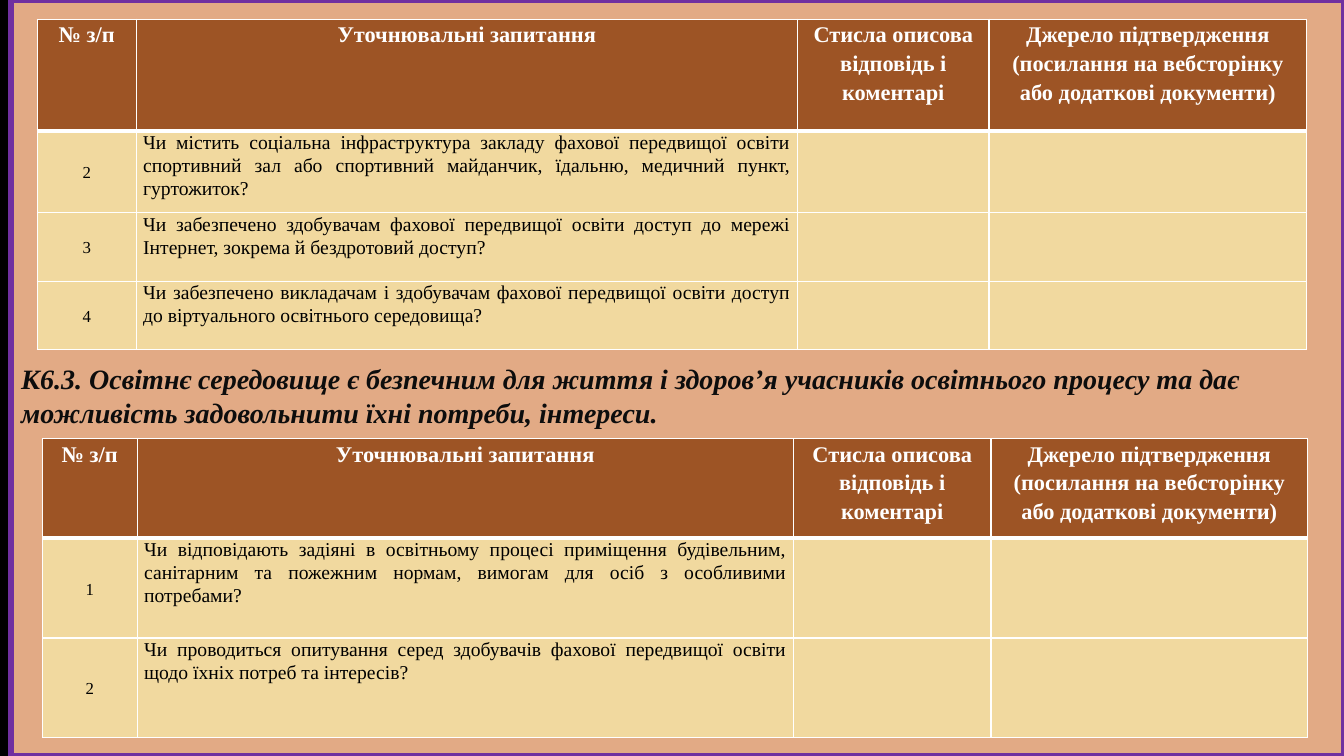
from dataclasses import dataclass

from lxml import etree
from pptx import Presentation
from pptx.dml.color import RGBColor
from pptx.enum.text import MSO_ANCHOR, MSO_AUTO_SIZE, PP_ALIGN
from pptx.oxml.ns import qn
from pptx.slide import Slide
from pptx.table import _Cell
from pptx.text.text import _Paragraph
from pptx.util import Emu, Pt

TOP, MIDDLE = MSO_ANCHOR.TOP, MSO_ANCHOR.MIDDLE
LEFT, CENTER, JUSTIFY = PP_ALIGN.LEFT, PP_ALIGN.CENTER, PP_ALIGN.JUSTIFY
NO_AUTOFIT = MSO_AUTO_SIZE.NONE
TITLE_ONLY = 5
EMU_PER_PX = 9144  # 100 px to the inch


@dataclass(frozen=True)
class Theme:
    font: str = "Times New Roman"
    backdrop: str = "000000"
    panel: str = "E2AA85"
    frame: str = "7030A0"
    title: str = "0D0D0D"
    header: str = "9D5425"
    body: str = "F1D99F"
    light: str = "FFFFFF"
    dark: str = "000000"
    title_size: int = 20
    header_size: int = 16
    question_size: int = 14
    number_size: int = 12
    frame_width: float = 4.5
    thin: int = 1
    thick: int = 3


@dataclass(frozen=True)
class TextStyle:
    size: int
    color: str
    align: PP_ALIGN
    spacing: float
    bold: bool = False
    italic: bool = False


@dataclass(frozen=True)
class Question:
    number: int
    text: str


@dataclass(frozen=True)
class QuestionTable:
    left: int
    top: int
    columns: tuple[int, ...]
    rows: tuple[int, ...]
    questions: tuple[Question, ...]


THEME = Theme()
TITLE_STYLE = TextStyle(THEME.title_size, THEME.title, LEFT, 1.0, True, True)
HEADER_STYLE = TextStyle(THEME.header_size, THEME.light, CENTER, 1.15, True)
NUMBER_STYLE = TextStyle(THEME.number_size, THEME.dark, CENTER, 1.15)
QUESTION_STYLE = TextStyle(THEME.question_size, THEME.dark, JUSTIFY, 1.06)

TITLE = (
    "К6.3. Освітнє середовище є безпечним для життя і здоров’я учасників "
    "освітнього процесу та дає можливість задовольнити їхні потреби, інтереси."
)
HEADERS = (
    ("№ з/п",),
    ("Уточнювальні запитання",),
    ("Стисла описова відповідь і коментарі",),
    ("Джерело підтвердження", "(посилання на вебсторінку або додаткові документи)"),
)
TABLES = (
    QuestionTable(37, 19, (98, 656, 190, 315), (111, 81, 68, 68), (
        Question(2, "Чи містить соціальна інфраструктура закладу фахової передвищої "
                    "освіти спортивний зал або спортивний майданчик, їдальню, "
                    "медичний пункт, гуртожиток?"),
        Question(3, "Чи забезпечено здобувачам фахової передвищої освіти доступ до "
                    "мережі Інтернет, зокрема й бездротовий доступ?"),
        Question(4, "Чи забезпечено викладачам і здобувачам фахової передвищої "
                    "освіти доступ до віртуального освітнього середовища?"),
    )),
    QuestionTable(42, 435, (94, 651, 196, 314), (99, 99, 99), (
        Question(1, "Чи відповідають задіяні в освітньому процесі приміщення "
                    "будівельним, санітарним та пожежним нормам, вимогам для осіб "
                    "з особливими потребами?"),
        Question(2, "Чи проводиться опитування серед здобувачів фахової передвищої "
                    "освіти щодо їхніх потреб та інтересів?"),
    )),
)


def px(length: int) -> Emu:
    return Emu(length * EMU_PER_PX)


def rgb(color: str) -> RGBColor:
    return RGBColor.from_string(color)


def write(para: _Paragraph, text: str, style: TextStyle) -> None:
    para.alignment = style.align
    para.line_spacing = style.spacing
    span = para.add_run()
    span.text = text
    span.font.name = THEME.font
    span.font.size = Pt(style.size)
    span.font.bold = style.bold
    span.font.italic = style.italic
    span.font.color.rgb = rgb(style.color)


def fill_cell(cell: _Cell, lines: tuple[str, ...], style: TextStyle, anchor: MSO_ANCHOR) -> None:
    cell.vertical_anchor = anchor
    cell.margin_left = cell.margin_right = px(7)
    cell.margin_top = cell.margin_bottom = 0
    frame = cell.text_frame
    for index, line in enumerate(lines):
        para = frame.add_paragraph() if index else frame.paragraphs[0]
        write(para, line, style)


def paint_cell(cell: _Cell, row: int) -> None:
    # Borders come before the fill in the cell properties
    properties = cell._tc.get_or_add_tcPr()
    widths = {
        "L": THEME.thin,
        "R": THEME.thin,
        "T": THEME.thick if row == 1 else THEME.thin,
        "B": THEME.thick if row == 0 else THEME.thin,
    }
    for side, width in widths.items():
        border = etree.SubElement(properties, qn(f"a:ln{side}"), w=str(Pt(width)))
        solid = etree.SubElement(border, qn("a:solidFill"))
        etree.SubElement(solid, qn("a:srgbClr"), val=THEME.light)
    cell.fill.solid()
    cell.fill.fore_color.rgb = rgb(THEME.body if row else THEME.header)


def draw_title(page: Slide) -> None:
    box = page.shapes.title
    box.left, box.top, box.width, box.height = px(11), px(0), px(1322), px(750)
    box.fill.solid()
    box.fill.fore_color.rgb = rgb(THEME.panel)
    box.line.color.rgb = rgb(THEME.frame)
    box.line.width = Pt(THEME.frame_width)
    frame = box.text_frame
    frame.auto_size = NO_AUTOFIT
    frame.word_wrap = True
    frame.vertical_anchor = MIDDLE
    frame.margin_left = frame.margin_right = px(10)
    # The extra top margin lowers the text into the gap between the tables
    frame.margin_top, frame.margin_bottom = px(39), px(5)
    write(frame.paragraphs[0], TITLE, TITLE_STYLE)


def draw_table(page: Slide, plan: QuestionTable) -> None:
    grid = page.shapes.add_table(
        len(plan.rows), len(plan.columns), px(plan.left), px(plan.top),
        px(sum(plan.columns)), px(sum(plan.rows)),
    ).table
    grid.horz_banding = False
    for column, width in zip(grid.columns, plan.columns):
        column.width = px(width)
    for row, height in zip(grid.rows, plan.rows):
        row.height = px(height)

    # Header and questions; the answer columns stay empty
    for column, lines in enumerate(HEADERS):
        fill_cell(grid.cell(0, column), lines, HEADER_STYLE, TOP)
    for row, question in enumerate(plan.questions, start=1):
        fill_cell(grid.cell(row, 0), (str(question.number),), NUMBER_STYLE, MIDDLE)
        fill_cell(grid.cell(row, 1), (question.text,), QUESTION_STYLE, TOP)

    for row in range(len(plan.rows)):
        for column in range(len(plan.columns)):
            paint_cell(grid.cell(row, column), row)


def main() -> None:
    deck = Presentation()
    deck.slide_width, deck.slide_height = px(1333), px(750)
    page = deck.slides.add_slide(deck.slide_layouts[TITLE_ONLY])
    page.background.fill.solid()
    page.background.fill.fore_color.rgb = rgb(THEME.backdrop)
    draw_title(page)
    for plan in TABLES:
        draw_table(page, plan)
    deck.save("out.pptx")


if __name__ == "__main__":
    main()
